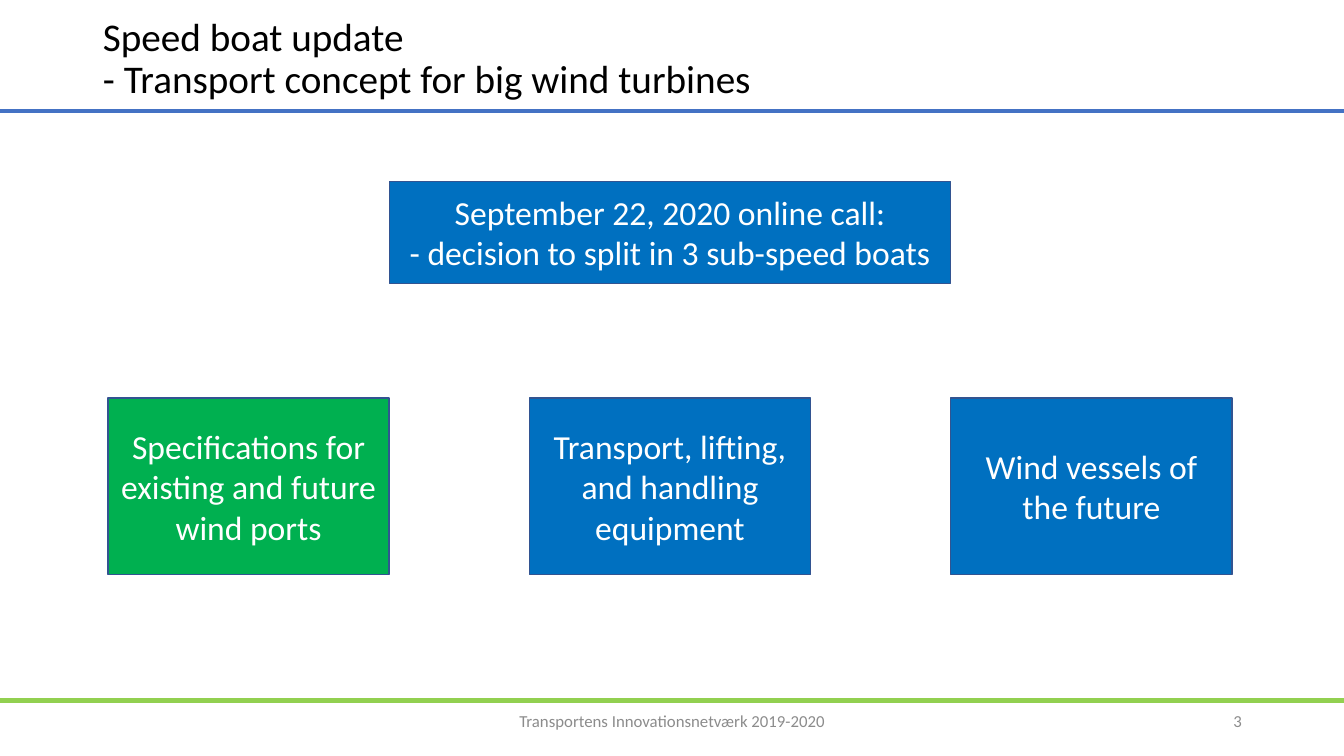
import pptx
import pptx.util
import pptx.dml.color
import pptx.enum.shapes
import pptx.enum.text
import pptx.oxml
import pptx.oxml.ns

Cm, Pt = pptx.util.Cm, pptx.util.Pt
RGBColor = pptx.dml.color.RGBColor
Align = pptx.enum.text.PP_ALIGN

BLACK = RGBColor(0x00, 0x00, 0x00)
WHITE = RGBColor(0xFF, 0xFF, 0xFF)
GREY = RGBColor(0x8C, 0x8C, 0x8C)
BLUE = RGBColor(0x00, 0x70, 0xC0)
GREEN = RGBColor(0x00, 0xB0, 0x50)
OUTLINE = RGBColor(0x32, 0x54, 0x91)
TITLE_RULE = RGBColor(0x44, 0x72, 0xC4)
FOOTER_RULE = RGBColor(0x92, 0xD0, 0x50)

SLIDE_WIDTH, SLIDE_HEIGHT = Cm(33.87), Cm(19.05)
TITLE_RULE_TOP, FOOTER_TOP = Cm(2.79), Cm(17.65)
FOOTER_HEIGHT = Cm(1.02)

BOAT_LEFT, BOAT_TOP = Cm(2.72), Cm(10.03)
BOAT_WIDTH, BOAT_HEIGHT = Cm(7.09), Cm(4.45)
BOAT_PITCH = Cm(10.62)
SUB_BOATS = [
    ("Specifications for\nexisting and future\nwind ports", GREEN),
    ("Transport, lifting, and handling equipment", BLUE),
    ("Wind vessels of the future", BLUE),
]


def set_attributes(target, formats):
    for name, value in formats.items():
        setattr(target, name, value)


def write_text(frame, text, size, color, align, line_spacing=None):
    frame.text = text
    set_attributes(frame, {
        "word_wrap": True,
        "auto_size": pptx.enum.text.MSO_AUTO_SIZE.NONE,
        "vertical_anchor": pptx.enum.text.MSO_ANCHOR.MIDDLE,
    })
    for paragraph in frame.paragraphs:
        set_attributes(paragraph, {"alignment": align, "line_spacing": line_spacing})
        for run in paragraph.runs:
            set_attributes(run.font, {"name": "Calibri", "size": Pt(size)})
            run.font.color.rgb = color


def add_title(slide, text):
    title = slide.shapes.title
    set_attributes(title, {"left": Cm(2.34), "top": Cm(-0.33),
                           "width": Cm(20.12), "height": Cm(3.68)})
    write_text(title.text_frame, text, 28, BLACK, Align.LEFT, 0.9)


def add_rule(slide, top, color):
    rule = slide.shapes.add_connector(
        pptx.enum.shapes.MSO_CONNECTOR.STRAIGHT, 0, top, SLIDE_WIDTH, top)
    rule.line.color.rgb = color
    rule.line.width = Pt(3)
    rule._element.spPr.append(pptx.oxml.parse_xml(
        "<a:effectLst %s/>" % pptx.oxml.ns.nsdecls("a")))


def add_footer(slide, text, left, width, align):
    footer = slide.shapes.add_textbox(left, FOOTER_TOP, width, FOOTER_HEIGHT)
    write_text(footer.text_frame, text, 12, GREY, align)


def add_box(slide, text, fill, left, top, width, height):
    box = slide.shapes.add_shape(
        pptx.enum.shapes.MSO_SHAPE.RECTANGLE, left, top, width, height)
    box.shadow.inherit = False
    box.fill.solid()
    box.fill.fore_color.rgb = fill
    box.line.color.rgb = OUTLINE
    box.line.width = Pt(1)
    write_text(box.text_frame, text, 24, WHITE, Align.CENTER)


def main():
    deck = pptx.Presentation()
    set_attributes(deck, {"slide_width": SLIDE_WIDTH, "slide_height": SLIDE_HEIGHT})
    slide = deck.slides.add_slide(deck.slide_layouts.get_by_name("Title Only"))

    # Rules, title and footer
    add_rule(slide, TITLE_RULE_TOP, TITLE_RULE)
    add_rule(slide, FOOTER_TOP, FOOTER_RULE)
    add_title(slide, "Speed boat update\v- Transport concept for big wind turbines")
    add_footer(slide, "Transportens Innovationsnetværk 2019-2020",
               Cm(10.26), Cm(13.36), Align.CENTER)
    add_footer(slide, "3", Cm(23.93), Cm(7.62), Align.RIGHT)

    # Decision, spanning from the first box's right edge to the last one's left
    decision_left = BOAT_LEFT + BOAT_WIDTH
    add_box(slide,
            "September 22, 2020 online call:\n- decision to split in 3 sub-speed boats",
            BLUE, decision_left, Cm(4.57),
            BOAT_LEFT + 2 * BOAT_PITCH - decision_left, Cm(2.57))

    # The three sub-speed boats
    for index, (topic, fill) in enumerate(SUB_BOATS):
        add_box(slide, topic, fill, BOAT_LEFT + index * BOAT_PITCH, BOAT_TOP,
                BOAT_WIDTH, BOAT_HEIGHT)

    deck.save("out.pptx")


if __name__ == "__main__":
    main()
